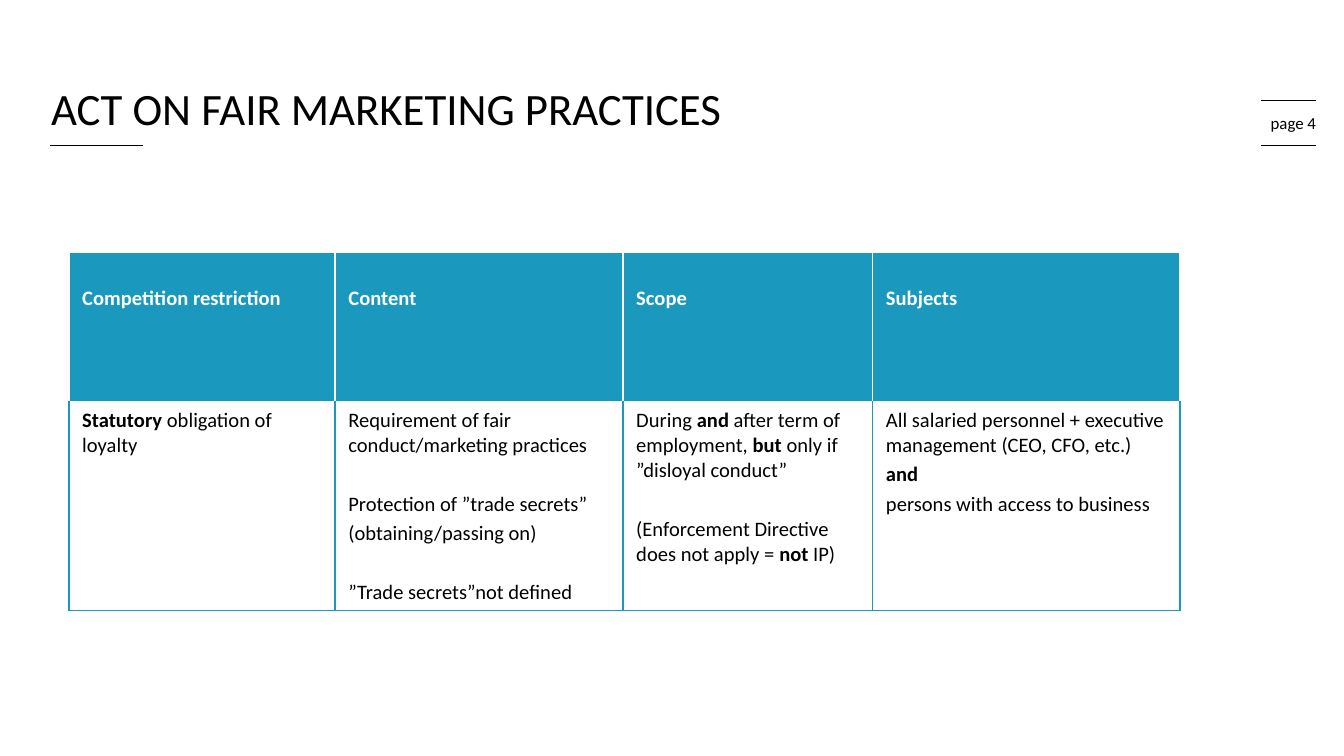
from lxml.etree import SubElement
from pptx import Presentation
from pptx.dml.color import RGBColor
from pptx.enum.shapes import MSO_CONNECTOR
from pptx.enum.text import MSO_ANCHOR, PP_ALIGN
from pptx.oxml.ns import qn
from pptx.util import Cm, Pt

TEAL, WHITE, BLACK = "1A98BD", "FFFFFF", "000000"
NEAR, FAR = 2.2, 17.8  # space before a paragraph, and before a new block


def add_span(para, text, size, color=BLACK, bold=False):
    span = para.add_run()
    span.text = text
    span.font.name = "Calibri"
    span.font.size = Pt(size)
    span.font.bold = bold
    span.font.color.rgb = RGBColor.from_string(color)


def add_border(cell, side, color):
    line = SubElement(cell._tc.get_or_add_tcPr(), qn(f"a:ln{side}"), w=str(Pt(1)))
    fill = SubElement(line, qn("a:solidFill"))
    SubElement(fill, qn("a:srgbClr"), val=color)


deck = Presentation()
deck.slide_width, deck.slide_height = Cm(25.4), Cm(14.29)
page = deck.slides.add_slide(deck.slide_layouts[5])

# Title
title = page.shapes.title
title.left, title.top, title.width, title.height = Cm(0.71), Cm(1.45), Cm(20.8), Cm(1.19)
frame = title.text_frame
frame.word_wrap = True
frame.vertical_anchor = MSO_ANCHOR.BOTTOM
frame.margin_bottom = Cm(0.1)
para = frame.paragraphs[0]
para.alignment = PP_ALIGN.LEFT
add_span(para, "ACT ON FAIR MARKETING PRACTICES", 24)

# Page number
box = page.shapes.add_textbox(Cm(22.1), Cm(2.11), Cm(3.02), Cm(0.43))
frame = box.text_frame
frame.word_wrap = True
frame.vertical_anchor = MSO_ANCHOR.MIDDLE
frame.margin_top = frame.margin_bottom = 0
para = frame.paragraphs[0]
para.alignment = PP_ALIGN.RIGHT
add_span(para, "page 4", 9)

# Rules around the page number and under the title
for left, right, y in [(23.83, 24.87, 1.9), (23.83, 24.87, 2.75), (0.95, 2.7, 2.75)]:
    rule = page.shapes.add_connector(MSO_CONNECTOR.STRAIGHT, Cm(left), Cm(y), Cm(right), Cm(y))
    rule.line.color.rgb = RGBColor.from_string(BLACK)
    rule.line.width = Pt(0.5)
    SubElement(rule._element.spPr, qn("a:effectLst"))

# Each column: width, heading, then paragraphs of (space before, [(text, bold)])
columns = [
    (5.03, "Competition restriction", [
        (0, [("Statutory", True), (" obligation of loyalty", False)]),
    ]),
    (5.44, "Content", [
        (0, [("Requirement of fair conduct/marketing practices", False)]),
        (FAR, [("Protection of ”trade secrets”", False)]),
        (NEAR, [("(obtaining/passing on)", False)]),
        (FAR, [("”Trade secrets”not defined", False)]),
    ]),
    (4.72, "Scope", [
        (0, [("During ", False), ("and ", True), ("after term of employment, ", False),
             ("but ", True), ("only if ”disloyal conduct”", False)]),
        (FAR, [("(Enforcement Directive does not apply = ", False), ("not", True),
               (" IP)", False)]),
    ]),
    (5.81, "Subjects", [
        (0, [("All salaried personnel + executive management (CEO, CFO, etc.)", False)]),
        (NEAR, [("and", True)]),
        (NEAR, [("persons with access to business", False)]),
    ]),
]

table = page.shapes.add_table(2, len(columns), Cm(1.3), Cm(4.76), Cm(21), Cm(6.78)).table
table.first_row = table.horz_banding = False
table.rows[0].height, table.rows[1].height = Cm(2.84), Cm(3.94)

for index, (width, heading, paragraphs) in enumerate(columns):
    table.columns[index].width = Cm(width)

    header = table.cell(0, index)
    header.margin_top, header.margin_bottom = Cm(0.65), Cm(0.1)
    for side in "LRTB":
        add_border(header, side, WHITE)
    header.fill.solid()
    header.fill.fore_color.rgb = RGBColor.from_string(TEAL)
    add_span(header.text_frame.paragraphs[0], heading, 11, WHITE, True)

    body = table.cell(1, index)
    body.margin_top = body.margin_bottom = Cm(0.1)
    for side in "LRTB":
        add_border(body, side, WHITE if side == "T" else TEAL)
    body.fill.background()
    frame = body.text_frame
    for number, (space, spans) in enumerate(paragraphs):
        para = frame.add_paragraph() if number else frame.paragraphs[0]
        para.space_before = Pt(space)
        for text, bold in spans:
            add_span(para, text, 11, bold=bold)

deck.save("out.pptx")
